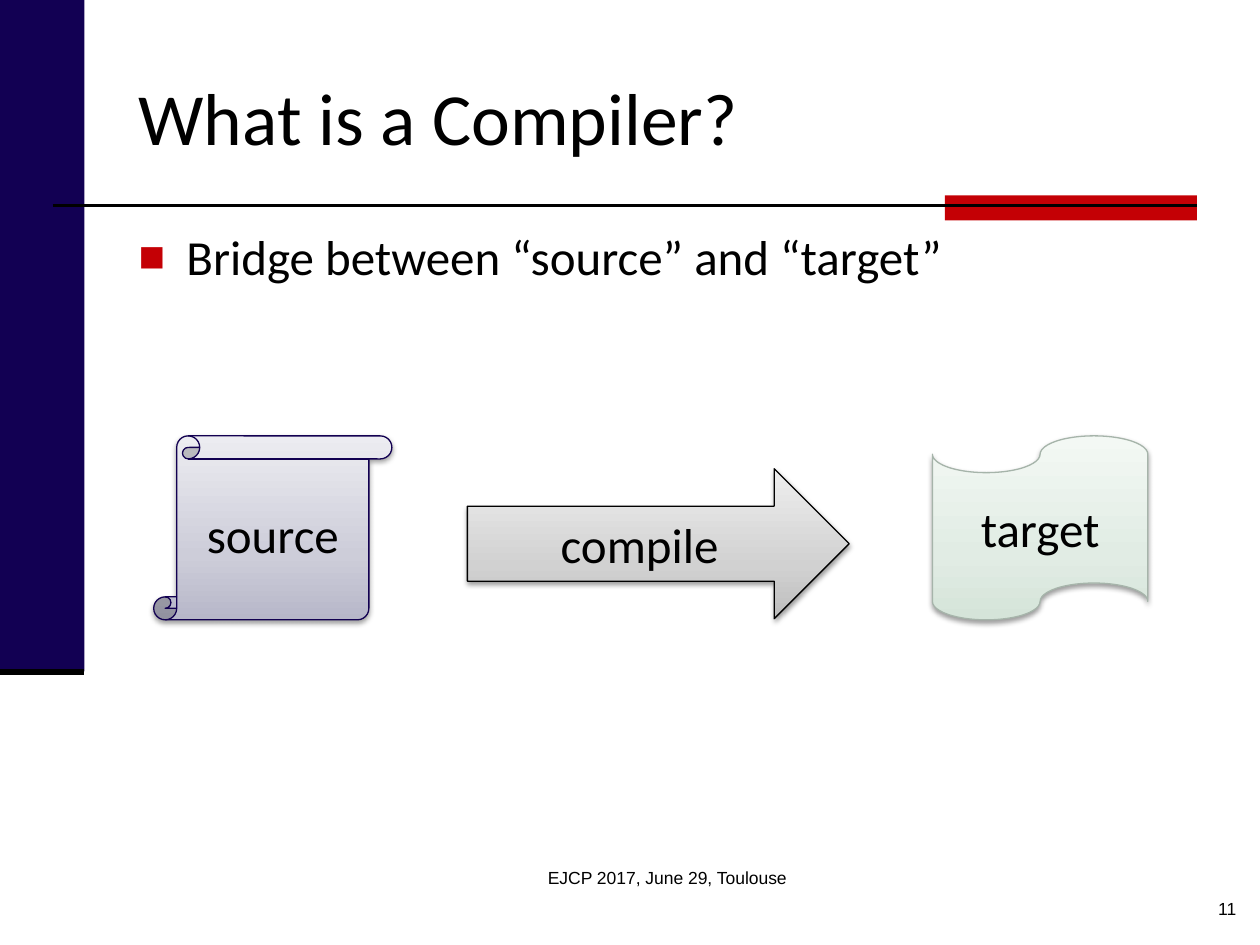
import pptx
import pptx.dml.color
import pptx.enum.shapes
import pptx.enum.text
import pptx.oxml.ns
import pptx.util
from lxml import etree

Inches = pptx.util.Inches
Pt = pptx.util.Pt
SHAPE = pptx.enum.shapes.MSO_SHAPE
ALIGN = pptx.enum.text.PP_ALIGN
ANCHOR = pptx.enum.text.MSO_ANCHOR
COLORS = {
    "black": "000000",
    "navy": "120053",
    "red": "C40005",
    "source line": "120051",
    "target line": "A6B4AA",
}
GRADIENTS = {
    "source": ("B7B7C9", "CDCDD9", "ECECF1"),
    "target": ("D5E4D9", "E1ECE4", "F3F8F4"),
    "compile": ("BDBDBD", "D1D1D1", "EEEEEE"),
}
GRADIENT_STOPS = (0, 35, 100)


def rgb(name):
    return pptx.dml.color.RGBColor.from_string(COLORS[name])


def add_element(parent, tag, **attributes):
    values = {key: str(value) for key, value in attributes.items()}
    return etree.SubElement(parent, pptx.oxml.ns.qn(tag), values)


def write_text(shape, text, size=28, font="Calibri", align=ALIGN.LEFT,
               anchor=ANCHOR.TOP, bullet=None):
    frame = shape.text_frame
    frame.word_wrap = True
    frame.auto_size = pptx.enum.text.MSO_AUTO_SIZE.NONE
    frame.vertical_anchor = anchor
    paragraph = frame.paragraphs[0]
    paragraph.alignment = align
    paragraph.space_before = Pt(0)
    if bullet:
        properties = paragraph._p.get_or_add_pPr()
        indent = Inches(0.38)
        properties.set("marL", str(indent))
        properties.set("indent", str(-indent))
        color = add_element(properties, "a:buClr")
        add_element(color, "a:srgbClr", val=COLORS["red"])
        add_element(properties, "a:buSzPct", val=90000)
        add_element(properties, "a:buFont", typeface="Arial")
        add_element(properties, "a:buChar", char=bullet)
    run = paragraph.add_run()
    run.text = text
    run.font.size = Pt(size)
    run.font.name = font
    run.font.color.rgb = rgb("black")


def place(shape, left, top, width, height):
    shape.left, shape.top = Inches(left), Inches(top)
    shape.width, shape.height = Inches(width), Inches(height)


def add_shape(slide, kind, left, top, width, height):
    shape = slide.shapes.add_shape(
        kind, Inches(left), Inches(top), Inches(width), Inches(height))
    shape.shadow.inherit = False
    return shape


def add_block(slide, color, *box):
    block = add_shape(slide, SHAPE.RECTANGLE, *box)
    block.fill.solid()
    block.fill.fore_color.rgb = rgb(color)
    block.line.fill.background()


def add_rule(slide, left, right, top, width):
    rule = slide.shapes.add_connector(
        pptx.enum.shapes.MSO_CONNECTOR.STRAIGHT,
        Inches(left), Inches(top), Inches(right), Inches(top))
    rule.line.color.rgb = rgb("black")
    rule.line.width = Pt(width)
    add_element(rule._element.spPr, "a:effectLst")


def add_stage(slide, kind, label, line, *box):
    stage = add_shape(slide, kind, *box)
    stage.line.color.rgb = rgb(line)
    stage.line.width = Pt(0.75)
    stage.fill.gradient()
    stage.fill.gradient_angle = 90
    properties = stage._element.spPr
    stops = properties.find(".//" + pptx.oxml.ns.qn("a:gsLst"))
    stops.clear()
    for position, color in zip(GRADIENT_STOPS, GRADIENTS[label]):
        stop = add_element(stops, "a:gs", pos=position * 1000)
        add_element(stop, "a:srgbClr", val=color)
    effects = properties.find(pptx.oxml.ns.qn("a:effectLst"))
    shadow = add_element(effects, "a:outerShdw", blurRad=Pt(3.1),
                         dist=Pt(1.6), dir=5400000, rotWithShape=0)
    color = add_element(shadow, "a:srgbClr", val=COLORS["black"])
    add_element(color, "a:alpha", val=38000)
    write_text(stage, label, align=ALIGN.CENTER, anchor=ANCHOR.MIDDLE)


def add_caption(slide, text, align, left, top, width, height):
    caption = slide.shapes.add_textbox(
        Inches(left), Inches(top), Inches(width), Inches(height))
    write_text(caption, text, size=10, font="Arial", align=align)


def main():
    presentation = pptx.Presentation()
    presentation.slide_width = Inches(10)
    presentation.slide_height = Inches(7.5)
    slide = presentation.slides.add_slide(presentation.slide_layouts[1])
    title, body = slide.placeholders

    add_block(slide, "navy", 0, 0, 0.67, 5.33)
    add_block(slide, "red", 7.5, 1.55, 2, 0.2)
    add_rule(slide, 0.42, 9.5, 1.63, 1.5)
    add_rule(slide, 0, 0.67, 5.33, 3.5)

    place(title, 1, 0.3, 8.5, 1.25)
    write_text(title, "What is a Compiler?", size=42, anchor=ANCHOR.MIDDLE)
    place(body, 1, 1.75, 8.5, 4.95)
    write_text(body, "Bridge between “source” and “target”", bullet="■")

    add_stage(slide, SHAPE.VERTICAL_SCROLL, "source", "source line",
              1.22, 3.46, 1.89, 1.46)
    add_stage(slide, SHAPE.FLOWCHART_PUNCHED_TAPE, "target", "target line",
              7.4, 3.46, 1.71, 1.46)
    add_stage(slide, SHAPE.RIGHT_ARROW, "compile", "black",
              3.71, 3.72, 3.03, 1.19)

    add_caption(slide, "11", ALIGN.RIGHT, 7.83, 7.08, 2.08, 0.25)
    add_caption(slide, "EJCP 2017, June 29, Toulouse", ALIGN.CENTER,
                3.67, 6.83, 3.25, 0.5)
    presentation.save("out.pptx")


if __name__ == "__main__":
    main()
